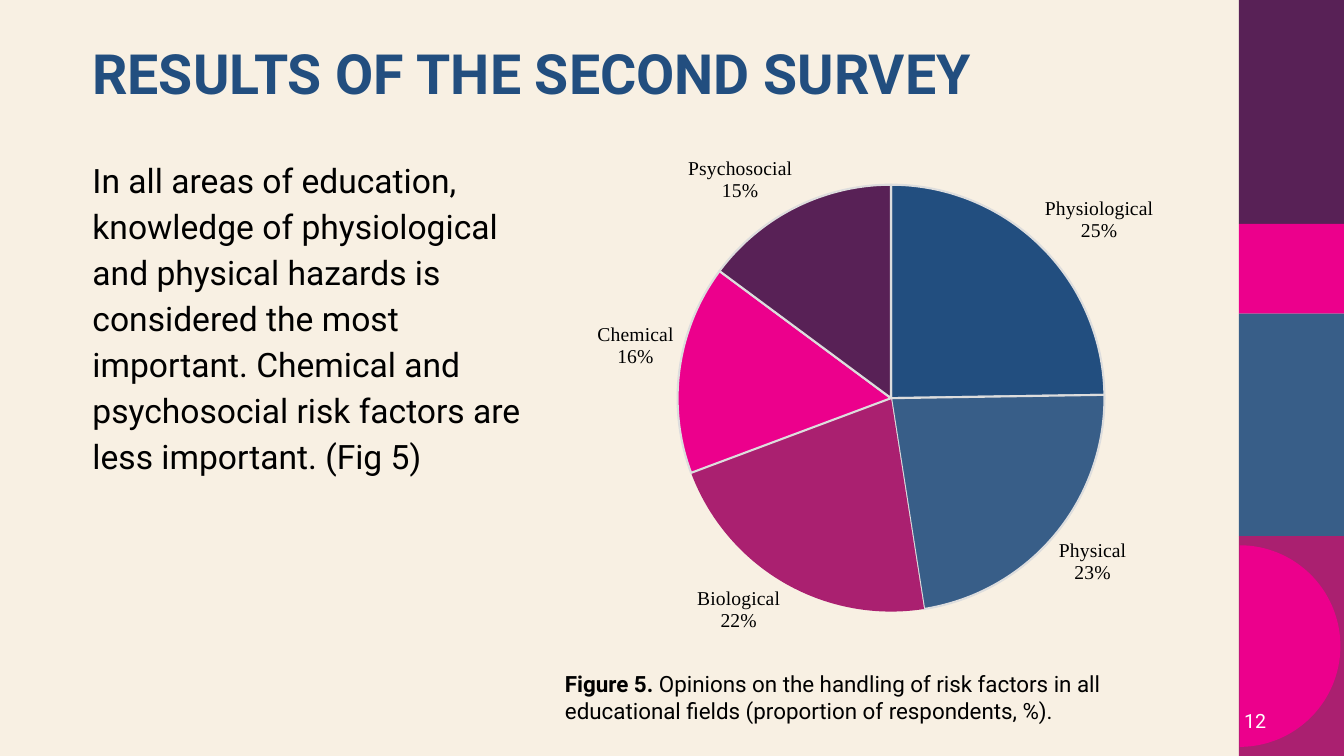
from dataclasses import dataclass
from math import cos, pi, sin

from lxml import etree
from pptx import Presentation
from pptx.chart.data import CategoryChartData
from pptx.dml.color import RGBColor
from pptx.enum.chart import XL_CHART_TYPE, XL_LABEL_POSITION
from pptx.enum.shapes import MSO_SHAPE
from pptx.enum.text import MSO_ANCHOR, PP_ALIGN
from pptx.oxml.ns import qn
from pptx.util import Pt

PIE = XL_CHART_TYPE.PIE
OUTSIDE_END = XL_LABEL_POSITION.OUTSIDE_END
RECTANGLE = MSO_SHAPE.RECTANGLE
TOP, MIDDLE = MSO_ANCHOR.TOP, MSO_ANCHOR.MIDDLE
LEFT, RIGHT = PP_ALIGN.LEFT, PP_ALIGN.RIGHT

COLORS = {
    "cream": "F8F0E3",
    "navy": "224E7F",
    "steel": "385E88",
    "berry": "AA2070",
    "pink": "EC008C",
    "plum": "582156",
    "outline": "DDDDDD",
    "black": "000000",
    "white": "FFFFFF",
}
FONT = "Roboto"
LABEL_FONT = "Times New Roman"
SLIDE_WIDTH, SLIDE_HEIGHT = 960, 540
BAND_LEFT = 885
PLOT_LAYOUT = {"x": 0.182, "y": 0.089, "w": 0.636, "h": 0.822}


@dataclass
class Band:
    top: float
    bottom: float
    color: str


@dataclass
class TextItem:
    box: tuple[float, float, float, float]
    lines: list[str]
    size: float
    color: str = "black"
    bold: bool = False
    lead: str = ""
    alignment: PP_ALIGN = LEFT
    anchor: MSO_ANCHOR = TOP
    line_spacing: float = 1.0


@dataclass
class Slice:
    category: str
    value: int
    color: str
    outlined: bool = True


BANDS = [
    Band(0, 160, "plum"),
    Band(160, 224, "pink"),
    Band(224, 383, "steel"),
    Band(383, SLIDE_HEIGHT, "berry"),
]
TEXTS = [
    TextItem((59, 28, 739.5, 53.5), ["RESULTS OF THE SECOND SURVEY"], 39.6,
             color="navy", bold=True, anchor=MIDDLE, line_spacing=0.9),
    TextItem((59, 106.5, 337.5, 409),
             ["In all areas of education, knowledge of physiological and physical "
              "hazards is considered the most important. Chemical and psychosocial "
              "risk factors are less important. (Fig 5)"], 24, line_spacing=1.14),
    TextItem((396.5, 475.2, 416, 46),
             ["Opinions on the handling of risk factors in all",
              "educational fields (proportion of respondents, %)."], 16,
             lead="Figure 5. "),
    TextItem((875.5, 500.5, 36, 29), ["12"], 14, color="white",
             alignment=RIGHT, anchor=MIDDLE),
]
SLICES = [
    Slice("Physiological", 25, "navy"),
    Slice("Physical", 23, "steel"),
    Slice("Biological", 22, "berry", outlined=False),
    Slice("Chemical", 16, "pink"),
    Slice("Psychosocial", 15, "plum"),
]


def rgb(name: str) -> RGBColor:
    return RGBColor.from_string(COLORS[name])


def paint(shape, color: str) -> None:
    shape.shadow.inherit = False
    shape.fill.solid()
    shape.fill.fore_color.rgb = rgb(color)
    shape.line.fill.background()


def add_band(slide, band: Band) -> None:
    shape = slide.shapes.add_shape(
        RECTANGLE, Pt(BAND_LEFT), Pt(band.top),
        Pt(SLIDE_WIDTH - BAND_LEFT), Pt(band.bottom - band.top))
    paint(shape, band.color)


def add_half_disc(slide, left: float, middle: float, radius: float, color: str) -> None:
    """Draw the right half of a disc whose flat side lies at left."""
    steps = 90
    angles = [pi * step / steps - pi / 2 for step in range(steps + 1)]
    points = [(Pt(left + radius * cos(angle)), Pt(middle + radius * sin(angle)))
              for angle in angles]
    builder = slide.shapes.build_freeform(*points[0])
    builder.add_line_segments(points[1:], close=True)
    paint(builder.convert_to_shape(), color)


def add_text(slide, item: TextItem) -> None:
    shape = slide.shapes.add_textbox(*(Pt(length) for length in item.box))
    text_frame = shape.text_frame
    text_frame.word_wrap = True
    text_frame.vertical_anchor = item.anchor
    text_frame.text = "\n".join(item.lines)
    if item.lead:
        first = text_frame.paragraphs[0]
        first.text = item.lead
        first.add_run().text = item.lines[0]
    for paragraph in text_frame.paragraphs:
        paragraph.alignment = item.alignment
        paragraph.line_spacing = item.line_spacing
        for run in paragraph.runs:
            run.font.name = FONT
            run.font.size = Pt(item.size)
            run.font.bold = item.bold or run.text == item.lead
            run.font.color.rgb = rgb(item.color)


def set_plot_layout(chart) -> None:
    """Fix the inner plot area as fractions of the chart."""
    plot_area = chart.plots[0]._element.getparent()
    layout = plot_area.find(qn("c:layout"))
    if layout is None:
        layout = etree.Element(qn("c:layout"))
        plot_area.insert(0, layout)
    manual = etree.SubElement(layout, qn("c:manualLayout"))
    settings = {"layoutTarget": "inner", "xMode": "edge", "yMode": "edge", **PLOT_LAYOUT}
    for tag, value in settings.items():
        etree.SubElement(manual, qn(f"c:{tag}")).set("val", str(value))


def add_pie(slide) -> None:
    data = CategoryChartData()
    data.categories = [item.category for item in SLICES]
    data.add_series("Series 1", [item.value for item in SLICES])
    chart = slide.shapes.add_chart(
        PIE, Pt(396.7), Pt(92.2), Pt(479.5), Pt(384.5), data).chart
    chart.has_legend = False
    chart.has_title = False
    chart.font.name = FONT
    chart.font.size = Pt(10)
    chart.font.color.rgb = rgb("black")
    set_plot_layout(chart)

    plot = chart.plots[0]
    plot.vary_by_categories = True
    for index, item in enumerate(SLICES):
        point_format = plot.series[0].points[index].format
        point_format.fill.solid()
        point_format.fill.fore_color.rgb = rgb(item.color)
        if item.outlined:
            point_format.line.color.rgb = rgb("outline")
            point_format.line.width = Pt(1.5)
        else:
            point_format.line.fill.background()

    labels = plot.series[0].data_labels
    labels.show_category_name = True
    labels.show_percentage = True
    labels.show_value = False
    labels.number_format = "0%"
    labels.number_format_is_linked = False
    labels.position = OUTSIDE_END
    labels.font.name = LABEL_FONT
    labels.font.size = Pt(14)
    labels.font.color.rgb = rgb("black")
    separator = etree.Element(qn("c:separator"))
    separator.text = "\n"
    labels._element.find(qn("c:showBubbleSize")).addnext(separator)


def main() -> None:
    presentation = Presentation()
    presentation.slide_width = Pt(SLIDE_WIDTH)
    presentation.slide_height = Pt(SLIDE_HEIGHT)
    slide = presentation.slides.add_slide(presentation.slide_layouts[6])
    slide.background.fill.solid()
    slide.background.fill.fore_color.rgb = rgb("cream")
    for band in BANDS:
        add_band(slide, band)
    add_half_disc(slide, 885.5, 461.5, 72, "pink")
    for item in TEXTS:
        add_text(slide, item)
    add_pie(slide)
    presentation.save("out.pptx")


if __name__ == "__main__":
    main()
